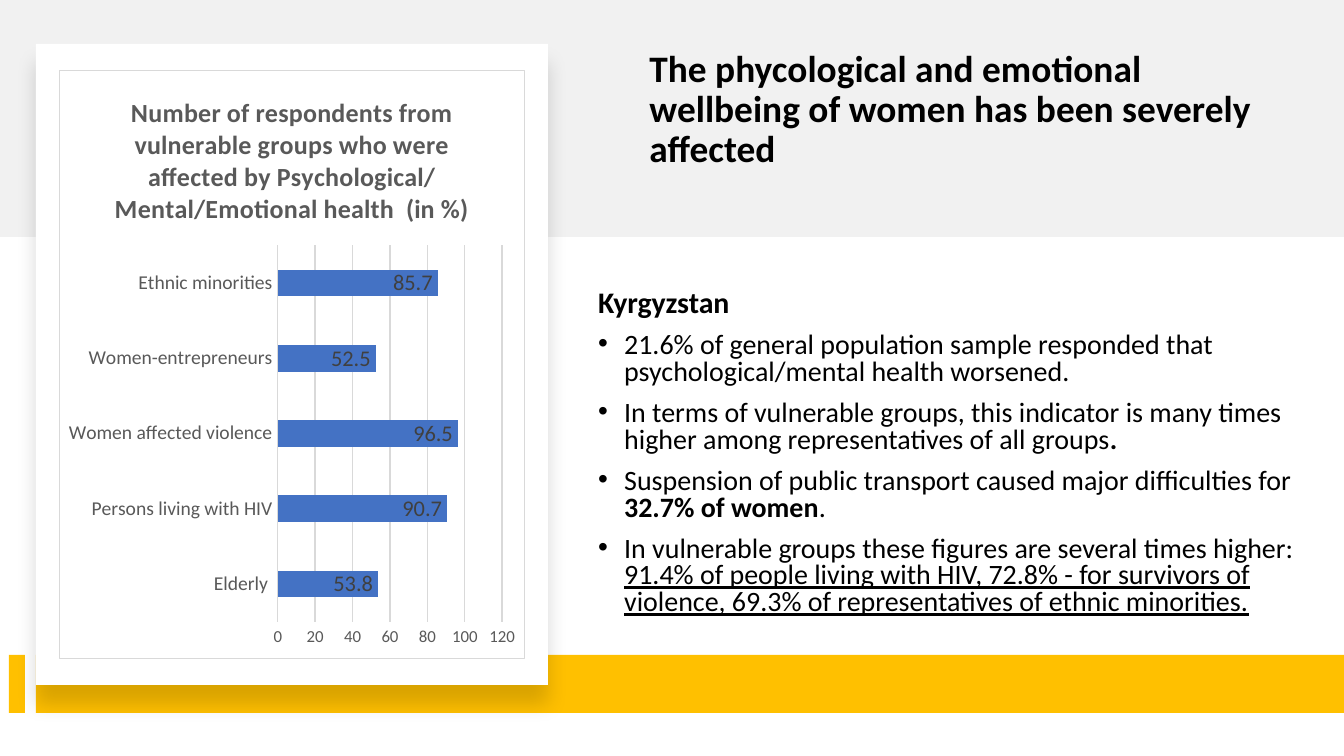
from lxml import etree
from pptx import Presentation, util as u
from pptx.chart import data
from pptx.dml.color import RGBColor
from pptx.enum import chart as ch, shapes, text
from pptx.oxml import parse_xml
from pptx.oxml.ns import nsdecls, qn

PX = 914400 / 134.4
FONT = "Calibri"
color = RGBColor.from_string


def box(*lengths):
    return [u.Emu(round(length * PX)) for length in lengths]


def style(font, size, hex_color, bold=False):
    font.name, font.size, font.bold = FONT, u.Pt(size), bold
    font.color.rgb = color(hex_color)


presentation = Presentation()
presentation.slide_width, presentation.slide_height = box(1344, 756)
slide = presentation.slides.add_slide(presentation.slide_layouts[5])

# Header band, yellow footer bars and white chart card
panels = []
for hex_color, *place in [
    ("D9D9D9", 0, 0, 1344, 237),
    ("FFC000", 9, 655, 16, 58),
    ("FFC000", 36, 655, 1308, 58),
    ("FFFFFF", 36, 44, 512, 641),
]:
    shape = slide.shapes.add_shape(shapes.MSO_SHAPE.RECTANGLE, *box(*place))
    shape.shadow.inherit = False
    shape.fill.solid()
    shape.fill.fore_color.rgb = color(hex_color)
    shape.line.fill.background()
    panels.append(shape)
band, card = panels[0], panels[-1]

band_color = band.element.spPr.find(qn("a:solidFill"))[0]
etree.SubElement(band_color, qn("a:alpha"), val="35000")
slide.shapes.element.insert(2, band.element)  # behind the title

card.element.spPr.find(qn("a:effectLst")).append(parse_xml(
    f'<a:outerShdw {nsdecls("a")} blurRad="139700" dist="127000" dir="5400000">'
    '<a:srgbClr val="000000"><a:alpha val="15000"/></a:srgbClr></a:outerShdw>'))

# Title
title = slide.shapes.title
title.left, title.top, title.width, title.height = box(636, 39, 644, 180)
frame = title.text_frame
frame.text = "The phycological and emotional wellbeing of women has been severely affected"
frame.word_wrap = True
frame.auto_size = text.MSO_AUTO_SIZE.NONE
frame.vertical_anchor = text.MSO_ANCHOR.BOTTOM
frame.margin_bottom = box(48)[0]
paragraph = frame.paragraphs[0]
paragraph.alignment = text.PP_ALIGN.LEFT
paragraph.line_spacing = 0.9
style(paragraph.font, 20, "000000", True)

# Findings: each paragraph is a list of (text, emphasis) runs
findings = [
    [("Kyrgyzstan", "bold")],
    [("21.6% of general population sample responded that "
      "psychological/mental health worsened.", "")],
    [("In terms of vulnerable groups, this indicator is many times higher "
      "among representatives of all groups", ""), (".", "bold")],
    [("Suspension of public transport caused major difficulties for ", ""),
     ("32.7% of women", "bold"), (".", "")],
    [("In vulnerable groups these figures are several times higher: ", ""),
     ("91.4% of people living with HIV, 72.8% - for survivors of violence, "
      "69.3% of representatives of ethnic minorities.", "underline")],
]
frame = slide.shapes.add_textbox(*box(585, 289, 723, 371)).text_frame
frame.word_wrap = True
frame.vertical_anchor = text.MSO_ANCHOR.MIDDLE
frame.margin_bottom = box(48)[0]
for index, runs in enumerate(findings):
    paragraph = frame.add_paragraph() if index else frame.paragraphs[0]
    paragraph.line_spacing = 0.8
    paragraph.space_before = u.Pt(7.5)
    style(paragraph.font, 15 if index else 16, "000000")
    if index:
        indent = box(26)[0]
        properties = paragraph._p.get_or_add_pPr()
        properties.set("marL", str(indent))
        properties.set("indent", str(-indent))
        bullet_font = parse_xml(f'<a:buFont {nsdecls("a")} typeface="Arial"/>')
        bullet = parse_xml(f'<a:buChar {nsdecls("a")} char="•"/>')
        properties.find(qn("a:defRPr")).addprevious(bullet_font)
        bullet_font.addnext(bullet)
    for words, emphasis in runs:
        run = paragraph.add_run()
        run.text = words
        style(run.font, 15 if index else 16, "000000", emphasis == "bold")
        if emphasis == "underline":
            run.font.underline = True

# Bar chart
chart_data = data.CategoryChartData()
chart_data.categories = ["Elderly ", "Persons living with HIV", "Women affected violence",
                         "Women-entrepreneurs", "Ethnic minorities"]
chart_data.add_series("Series 1", [53.8, 90.7, 96.5, 52.5, 85.7])
chart = slide.shapes.add_chart(
    ch.XL_CHART_TYPE.BAR_CLUSTERED, *box(59, 70, 466, 589), chart_data).chart
style(chart.font, 10, "000000")
chart.has_legend = False
chart.has_title = True
chart.chart_title.include_in_layout = False
heading = chart.chart_title.text_frame
heading.text = ("Number of respondents from vulnerable groups who were affected by "
                "Psychological/Mental/Emotional health  (in %)")
style(heading.paragraphs[0].runs[0].font, 14, "595959", True)

plot = chart.plots[0]
plot.gap_width = 182
plot.vary_by_categories = False
plot.has_data_labels = True
labels = plot.data_labels
labels.show_value = True
labels.position = ch.XL_LABEL_POSITION.INSIDE_END
style(labels.font, 12, "404040")
bars = plot.series[0].format.fill
bars.solid()
bars.fore_color.rgb = color("4472C4")

categories, values = chart.category_axis, chart.value_axis
for axis, size in [(categories, 10.5), (values, 9)]:
    axis.major_tick_mark = axis.minor_tick_mark = ch.XL_TICK_MARK.NONE
    style(axis.tick_labels.font, size, "595959")
values.minimum_scale, values.maximum_scale, values.major_unit = 0, 120, 20
values.has_major_gridlines = True
values.format.line.fill.background()
for line in (categories.format.line, values.major_gridlines.format.line):
    line.color.rgb = color("D9D9D9")
    line.width = u.Pt(0.75)

# Chart background and border
chart.element.find(qn("c:chart")).addnext(parse_xml(
    f'<c:spPr {nsdecls("c", "a")}><a:solidFill><a:srgbClr val="FFFFFF"/></a:solidFill>'
    '<a:ln w="9525"><a:solidFill><a:srgbClr val="D9D9D9"/></a:solidFill></a:ln></c:spPr>'))

presentation.save("out.pptx")
